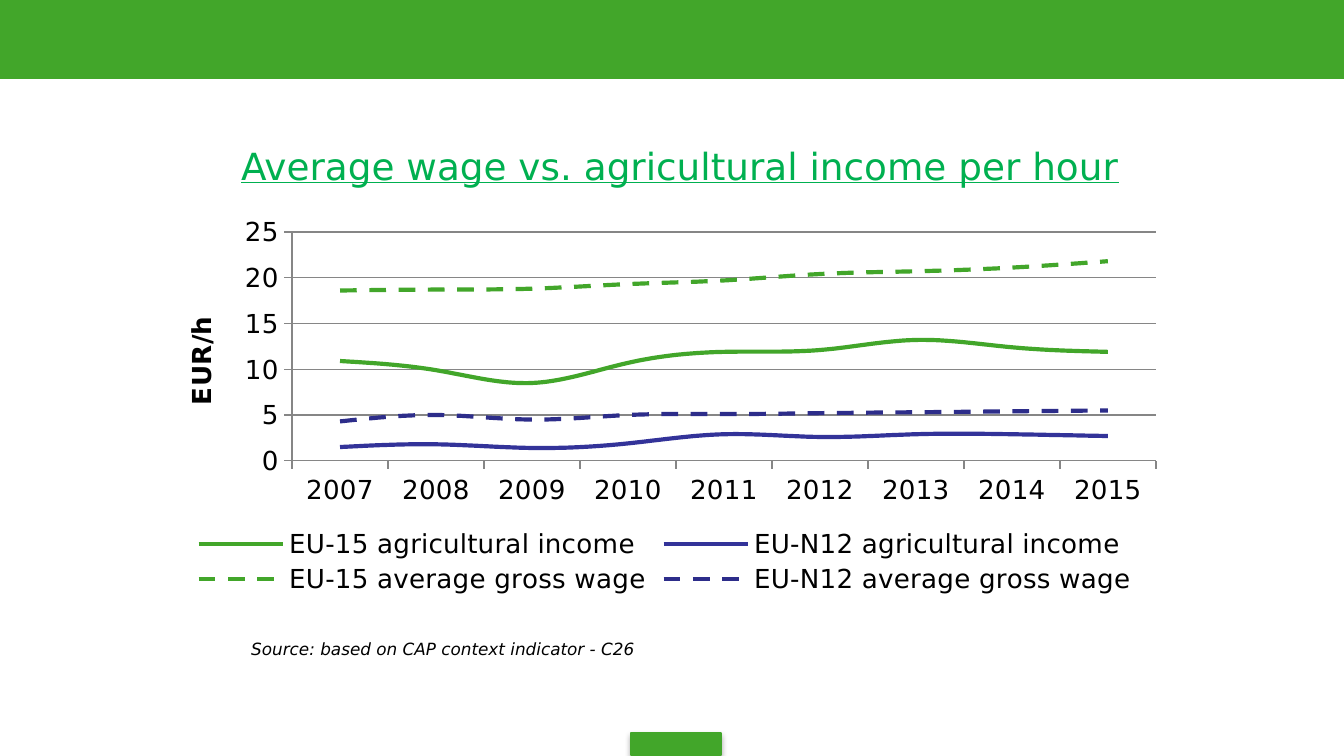
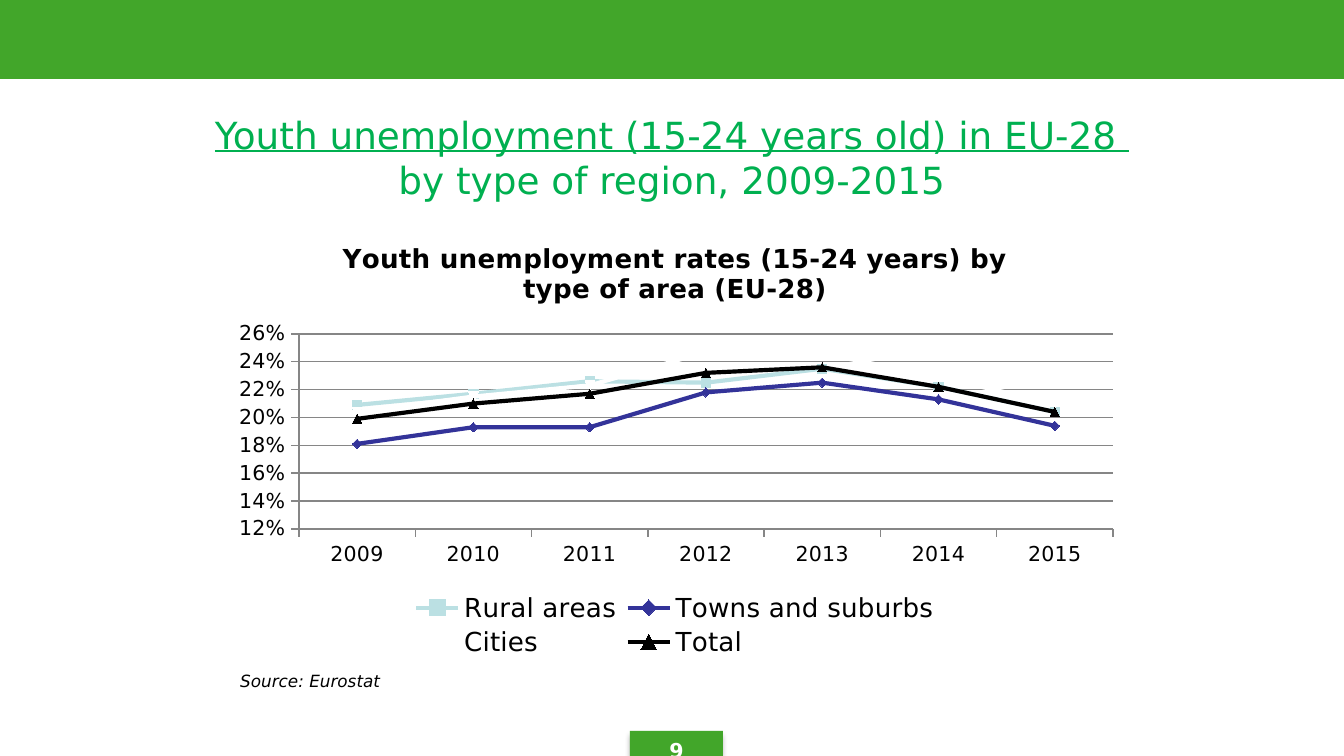
from lxml import etree
from pptx import Presentation
from pptx.chart.data import CategoryChartData
from pptx.dml.color import RGBColor
from pptx.enum.chart import XL_CHART_TYPE, XL_LEGEND_POSITION, XL_TICK_MARK
from pptx.enum.dml import MSO_LINE
from pptx.enum.shapes import MSO_SHAPE
from pptx.enum.text import MSO_ANCHOR, PP_ALIGN
from pptx.oxml import parse_xml
from pptx.oxml.ns import nsdecls, qn
from pptx.util import Emu, Pt

LINE, MARKED = XL_CHART_TYPE.LINE, XL_CHART_TYPE.LINE_MARKERS
BOTTOM, OUT = XL_LEGEND_POSITION.BOTTOM, XL_TICK_MARK.OUTSIDE
DASH, SOLID, RECT = MSO_LINE.DASH, MSO_LINE.SOLID, MSO_SHAPE.RECTANGLE
TOP, MIDDLE = MSO_ANCHOR.TOP, MSO_ANCHOR.MIDDLE
LEFT, CENTER = PP_ALIGN.LEFT, PP_ALIGN.CENTER

SCALE = 914400 / 134.4
WIDE, HIGH = 1344, 756
FONT = "DejaVu Sans"
GREEN, TITLE, NAVY, GRAY = "42A62A", "00B050", "333399", "868686"
BLACK, WHITE = "000000", "FFFFFF"
BAND = (0, 0, WIDE, 78)
TAB = (631, 733, 90, 22)
BADGE = (630, 731, 93, 25)

SLIDES = [
    dict(
        title=["Average wage vs. agricultural income per hour"],
        head=(16, 134, 1328, 64),
        source="Source: based on CAP context indicator - C26",
        foot=(238, 632, 973, 34),
        page=None,
        chart=dict(
            kind=LINE, box=(153, 208, 1023, 391),
            plot=(292, 232, 864, 229), key=(190, 525, 950, 73),
            title=None, unit="EUR/h", size=14, form="General", span=(0, 25),
            years=range(2007, 2016),
            rows=[
                ("EU-15 agricultural income", GREEN, SOLID,
                 (10.9, 9.9, 8.5, 10.7, 11.9, 12.1, 13.2, 12.4, 11.9)),
                ("EU-N12 agricultural income", NAVY, SOLID,
                 (1.5, 1.8, 1.4, 1.9, 2.9, 2.6, 2.9, 2.9, 2.7)),
                ("EU-15 average gross wage", GREEN, DASH,
                 (18.6, 18.7, 18.8, 19.3, 19.7, 20.4, 20.7, 21.1, 21.8)),
                ("EU-N12 average gross wage", "2D2D8A", DASH,
                 (4.3, 5, 4.5, 5, 5.1, 5.2, 5.3, 5.4, 5.5)),
            ],
        ),
    ),
    dict(
        title=["Youth unemployment (15-24 years old) in EU-28 ",
               "by type of region, 2009-2015"],
        head=(0, 116, WIDE, 82),
        source="Source: Eurostat",
        foot=(227, 664, 208, 34),
        page="9",
        chart=dict(
            kind=MARKED, box=(220, 219, 910, 445),
            plot=(299, 334, 814, 195), key=(405, 589, 540, 72),
            title="Youth unemployment rates (15-24 years) by type of area (EU-28)",
            unit=None, size=11, form="0%", span=(0.12, 0.26),
            years=range(2009, 2016),
            rows=[
                ("Rural areas", "BBE0E3", SOLID,
                 (0.209, 0.217, 0.226, 0.225, 0.235, 0.222, 0.204)),
                ("Towns and suburbs", NAVY, SOLID,
                 (0.181, 0.193, 0.193, 0.218, 0.225, 0.213, 0.194)),
                ("Cities", WHITE, SOLID,
                 (0.204, 0.215, 0.223, 0.247, 0.246, 0.229, 0.21)),
                ("Total", BLACK, SOLID,
                 (0.199, 0.21, 0.217, 0.232, 0.236, 0.222, 0.204)),
            ],
        ),
    ),
]


def px(box):
    return [Emu(round(n * SCALE)) for n in box]


def paint(part, hue):
    if hasattr(part, "solid"):
        part.solid()
        part.fore_color.rgb = RGBColor.from_string(hue)
    else:
        part.rgb = RGBColor.from_string(hue)


def style(font, size, hue=BLACK, bold=False, italic=False):
    font.name, font.size, font.bold, font.italic = FONT, Pt(size), bold, italic
    paint(font.color if font.color.type else font.fill, hue)


def write(frame, lines, size, hue=BLACK, align=LEFT, anchor=TOP,
          bold=False, italic=False, under=False):
    frame.word_wrap = True
    frame.vertical_anchor = anchor
    para = frame.paragraphs[0]
    para.alignment = align
    for i, line in enumerate(lines):
        if i:
            para.add_line_break()
        run = para.add_run()
        run.text = line
        style(run.font, size, hue, bold, italic)
        run.font.underline = under and i == 0


def block(slide, box, edge=True):
    shape = slide.shapes.add_shape(RECT, *px(box))
    shape.shadow.inherit = False
    paint(shape.fill, GREEN)
    if edge:
        paint(shape.line.fill, GREEN)
        shape.line.width = Pt(0.75)
    else:
        shape.line.fill.background()
    return shape


def shade(shape):
    effect = shape.element.spPr.find(qn("a:effectLst"))
    drop = etree.SubElement(effect, qn("a:outerShdw"), blurRad="40000",
                            dist="23000", dir="5400000", rotWithShape="0")
    tone = etree.SubElement(drop, qn("a:srgbClr"), val=BLACK)
    etree.SubElement(tone, qn("a:alpha"), val="35000")


def place(node, spot, box, area, inner=False):
    old = node.find(qn("c:layout"))
    if old is not None:
        node.remove(old)
    x, y, w, h = area
    left, top, wide, high = box
    parts = [("xMode", "edge"), ("yMode", "edge"),
             ("x", (x - left) / wide), ("y", (y - top) / high),
             ("w", w / wide), ("h", h / high)]
    if inner:
        parts.insert(0, ("layoutTarget", "inner"))
    body = "".join(f'<c:{tag} val="{val}"/>' for tag, val in parts)
    node.insert(spot, parse_xml(
        f'<c:layout {nsdecls("c")}><c:manualLayout>{body}</c:manualLayout></c:layout>'))


def label(owner, text):
    write(owner.text_frame, [text], 14, bold=True)


def graph(slide, kind, box, plot, key, title, unit, size, form, span, years, rows):
    data = CategoryChartData(number_format=form)
    data.categories = [str(year) for year in years]
    for name, hue, dash, vals in rows:
        data.add_series(name, vals)
    chart = slide.shapes.add_chart(kind, *px(box), data).chart
    style(chart.font, size)

    chart.has_title = bool(title)
    if title:
        label(chart.chart_title, title)
        chart.chart_title.include_in_layout = False

    chart.has_legend = True
    chart.legend.position = BOTTOM
    chart.legend.include_in_layout = False
    style(chart.legend.font, 14)

    cat, val = chart.category_axis, chart.value_axis
    for axis in (cat, val):
        axis.major_tick_mark = OUT
        style(axis.tick_labels.font, size)
        paint(axis.format.line.fill, GRAY)
        axis.format.line.width = Pt(0.75)
    val.minimum_scale, val.maximum_scale = span
    val.tick_labels.number_format = form
    val.tick_labels.number_format_is_linked = False
    val.has_major_gridlines = True
    grid = val.major_gridlines.format.line
    paint(grid.fill, GRAY)
    grid.width = Pt(0.75)
    if unit:
        label(val.axis_title, unit)

    chart.plots[0].vary_by_categories = False
    for line, (name, hue, dash, vals) in zip(chart.plots[0].series, rows):
        line.smooth = kind == LINE
        paint(line.format.line.fill, hue)
        line.format.line.width = Pt(2.25)
        line.format.line.dash_style = dash
        if kind == MARKED:
            line.marker.size = 5
            paint(line.marker.format.fill, hue)
            paint(line.marker.format.line.fill, hue)

    area = chart.element.find(".//" + qn("c:plotArea"))
    place(area, 0, box, plot, inner=True)
    place(chart.element.find(".//" + qn("c:legend")), 1, box, key)


def build(deck, title, head, source, foot, page, chart):
    slide = deck.slides.add_slide(deck.slide_layouts[6])
    block(slide, BAND)
    shade(block(slide, TAB))
    text = slide.shapes.add_textbox(*px(head)).text_frame
    write(text, title, 20, TITLE, CENTER, MIDDLE, under=True)
    if page:
        badge = block(slide, BADGE, edge=False)
        write(badge.text_frame, [page], 11, WHITE, CENTER, bold=True)
    graph(slide, **chart)
    text = slide.shapes.add_textbox(*px(foot)).text_frame
    write(text, [source], 9, italic=True)


def main():
    deck = Presentation()
    deck.slide_width, deck.slide_height = px((WIDE, HIGH))
    for item in SLIDES:
        build(deck, **item)
    deck.save("out.pptx")


if __name__ == "__main__":
    main()
